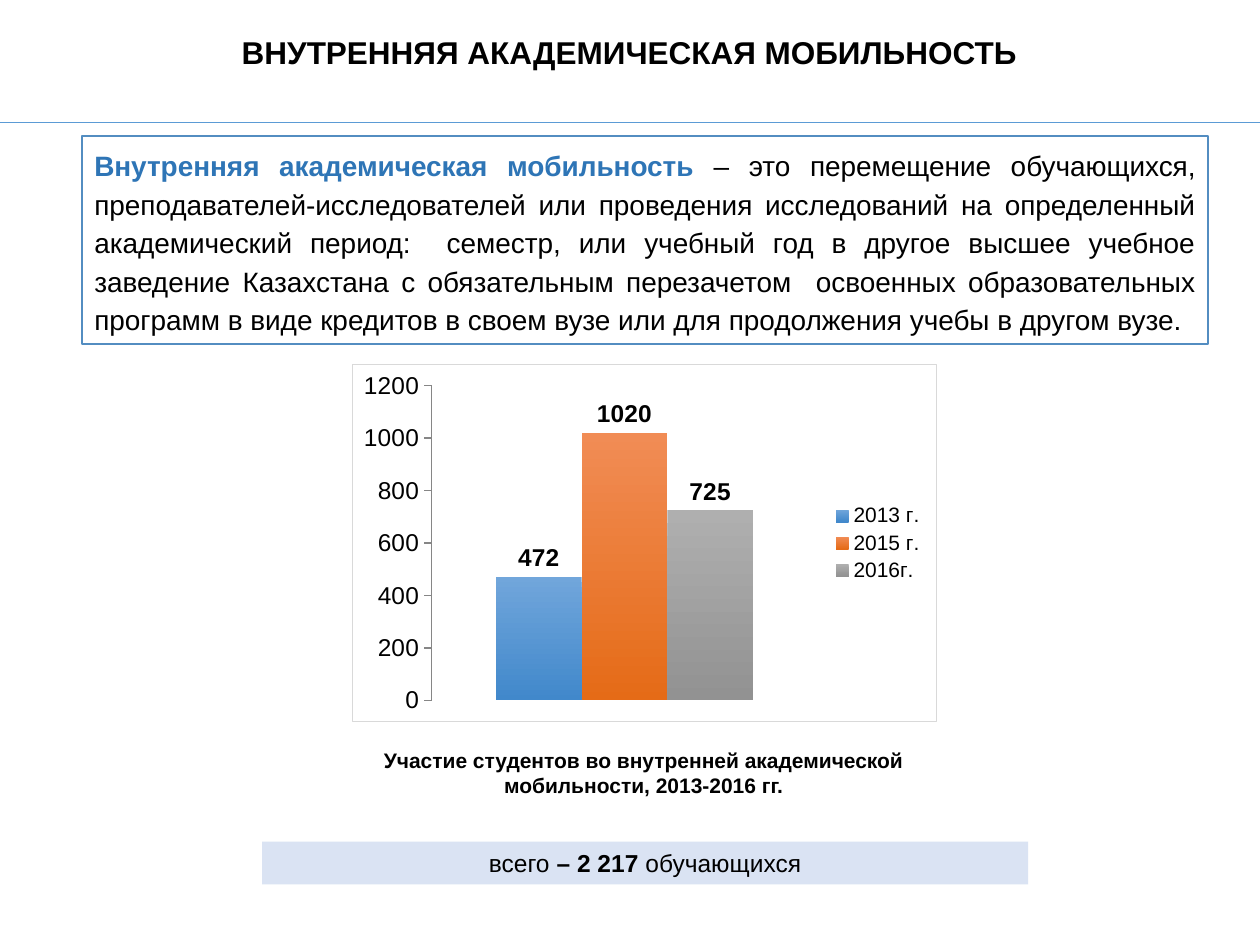
from lxml.etree import SubElement
from pptx import Presentation
from pptx.chart.data import CategoryChartData
from pptx.dml.color import RGBColor
from pptx.enum.chart import XL_CHART_TYPE, XL_LABEL_POSITION, XL_LEGEND_POSITION, XL_TICK_MARK
from pptx.enum.shapes import MSO_CONNECTOR, MSO_SHAPE
from pptx.enum.text import MSO_ANCHOR, PP_ALIGN
from pptx.oxml import parse_xml
from pptx.oxml.ns import nsdecls, qn
from pptx.util import Inches, Pt

FONT = "Arial"
BLACK = "000000"
TITLE = "ВНУТРЕННЯЯ АКАДЕМИЧЕСКАЯ МОБИЛЬНОСТЬ"
DEFINITION = [
    ("Внутренняя академическая мобильность", True, "2E75B6"),
    (" – это перемещение обучающихся, преподавателей-исследователей или проведения "
     "исследований на определенный академический период:  семестр, или учебный год в "
     "другое высшее учебное заведение Казахстана с обязательным перезачетом  освоенных "
     "образовательных программ в виде кредитов в своем вузе или для продолжения учебы "
     "в другом вузе.", False, BLACK),
]
CAPTION = "Участие студентов во внутренней академической мобильности, 2013-2016 гг."
TOTAL = [("всего ", False, BLACK), ("– 2 217 ", True, BLACK), ("обучающихся", False, BLACK)]
SERIES = [
    ("2013 г.", 472, "71A6DB", "4188CB"),
    ("2015 г.", 1020, "F18C55", "E56B17"),
    ("2016г.", 725, "AFAFAF", "929292"),
]


def color(value):
    return RGBColor.from_string(value)


def style(font, size, bold=False, value=BLACK):
    font.name = FONT
    font.size = Pt(size)
    font.bold = bold
    font.color.rgb = color(value)


def write(shape, spans, size, align=PP_ALIGN.CENTER, anchor=MSO_ANCHOR.MIDDLE, spacing=None):
    frame = shape.text_frame
    frame.word_wrap = True
    frame.vertical_anchor = anchor
    para = frame.paragraphs[0]
    para.alignment = align
    para.line_spacing = spacing
    for text, bold, value in spans:
        span = para.add_run()
        span.text = text
        style(span.font, size, bold, value)


def place(shape, left, top, width, height):
    shape.left, shape.top = Inches(left), Inches(top)
    shape.width, shape.height = Inches(width), Inches(height)


def add_panel(page, area, fill, line=None):
    panel = page.shapes.add_shape(MSO_SHAPE.RECTANGLE, *map(Inches, area))
    panel.shadow.inherit = False
    panel.fill.solid()
    panel.fill.fore_color.rgb = color(fill)
    if line:
        panel.line.color.rgb = color(line)
        panel.line.width = Pt(1)
    else:
        panel.line.fill.background()
    return panel


def add_rule(page, top):
    rule = page.shapes.add_connector(
        MSO_CONNECTOR.STRAIGHT, 0, Inches(top), Inches(10), Inches(top))
    rule.line.color.rgb = color("5B9BD5")
    rule.line.width = Pt(0.5)
    SubElement(rule._element.spPr, qn("a:effectLst"))


def add_student_chart(page, area):
    data = CategoryChartData()
    data.categories = ["1"]
    for name, count, _, _ in SERIES:
        data.add_series(name, [count])
    chart = page.shapes.add_chart(
        XL_CHART_TYPE.COLUMN_CLUSTERED, *map(Inches, area), data).chart
    style(chart.font, 14)
    chart.has_title = False
    chart.has_legend = True
    chart.legend.position = XL_LEGEND_POSITION.RIGHT
    chart.legend.include_in_layout = False
    style(chart.legend.font, 12)
    chart.category_axis.visible = False
    axis = chart.value_axis
    axis.has_major_gridlines = False
    axis.minimum_scale, axis.maximum_scale, axis.major_unit = 0, 1200, 200
    axis.major_tick_mark = XL_TICK_MARK.OUTSIDE
    axis.format.line.color.rgb = color("868686")
    plot = chart.plots[0]
    plot.gap_width = 150
    plot.overlap = 0
    plot.vary_by_categories = False
    for series, (_, _, *shades) in zip(plot.series, SERIES):
        fill = series.format.fill
        fill.gradient()
        fill.gradient_angle = 270
        for stop, shade in zip(fill.gradient_stops, shades):
            stop.color.rgb = color(shade)
        labels = series.data_labels
        labels.show_value = True
        labels.position = XL_LABEL_POSITION.OUTSIDE_END
        style(labels.font, 14, True)
    border = parse_xml(
        f'<c:spPr {nsdecls("c", "a")}><a:solidFill><a:srgbClr val="FFFFFF"/></a:solidFill>'
        f'<a:ln w="{Pt(0.75)}"><a:solidFill><a:srgbClr val="D9D9D9"/></a:solidFill></a:ln></c:spPr>')
    chart._chartSpace.find(qn("c:chart")).addnext(border)


def main():
    deck = Presentation()
    deck.slide_width, deck.slide_height = Inches(10), Inches(7.5)
    page = deck.slides.add_slide(deck.slide_layouts[5])
    title = page.shapes.title
    place(title, 0.77, 0.19, 8.45, 0.45)
    write(title, [(TITLE, True, BLACK)], 18)
    add_rule(page, 0.97)
    caption = page.shapes.add_textbox(*map(Inches, (2.61, 5.88, 5, 0.5)))
    write(caption, [(CAPTION, True, BLACK)], 12, anchor=MSO_ANCHOR.TOP)
    definition = add_panel(page, (0.65, 1.08, 8.94, 1.65), "FFFFFF", "538DC1")
    write(definition, DEFINITION, 16, PP_ALIGN.JUSTIFY, spacing=1.15)
    add_student_chart(page, (2.79, 2.89, 4.65, 2.84))
    total = add_panel(page, (2.08, 6.68, 6.08, 0.34), "DAE3F3")
    write(total, TOTAL, 14)
    deck.save("out.pptx")


if __name__ == "__main__":
    main()
